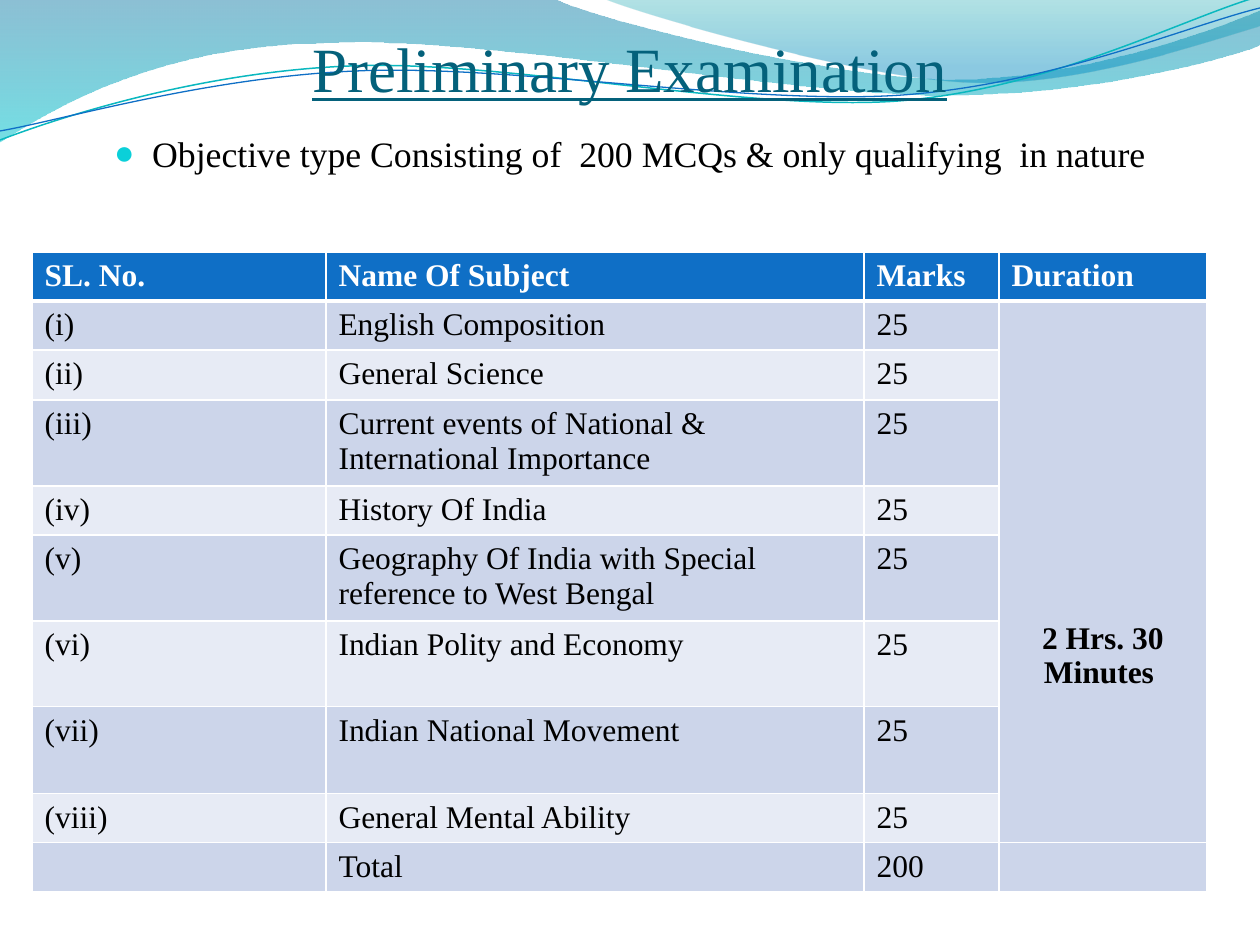
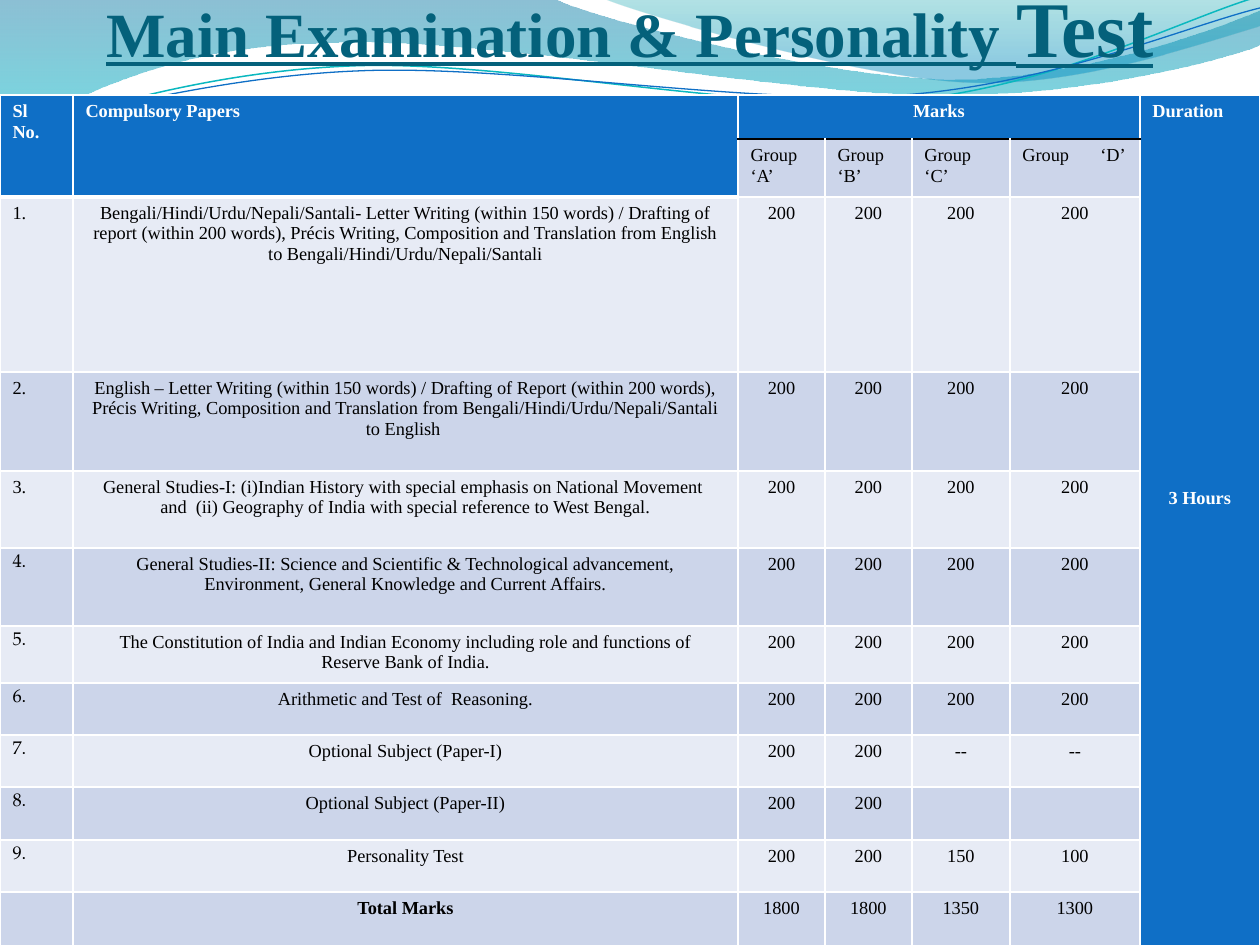
"""Builds two slides on the examination scheme: preliminary, and main with personality test."""
import itertools

import lxml.etree
import pptx
import pptx.dml.color
import pptx.enum.text
import pptx.oxml.ns
import pptx.util

RGB = pptx.dml.color.RGBColor
ALIGN = pptx.enum.text.PP_ALIGN
ANCHOR = pptx.enum.text.MSO_ANCHOR
qn = pptx.oxml.ns.qn

WHITE = RGB(0xFF, 0xFF, 0xFF)
BLACK = RGB(0, 0, 0)
TITLE_TEAL = RGB(0x04, 0x61, 0x7B)
HEADER_BLUE = RGB(0x0F, 0x6F, 0xC6)
BULLET_CYAN = RGB(0x0B, 0xD0, 0xD9)
STRAND_TEAL = RGB(0x0A, 0xB8, 0xBF)
BAND_DARK = RGB(0xCC, 0xD5, 0xEA)
BAND_LIGHT = RGB(0xE7, 0xEB, 0xF5)

SERIF = "Times New Roman"
NUMERAL = "TeX Gyre Pagella"
EMU_PER_PX = 914400 / 126

WAVE = [(0, 0), [(554, -1)], [(600, 21), (837, 79), (955, 79)],
        [(1075, 79), (1207, 33), (1260, 11)], [(1261, 45)],
        [(1239, 55), (1096, 96), (940, 95)], [(784, 95), (481, 35), (324, 43)],
        [(163, 45), (58, 105), (-1, 142)]]
WAVE_STOPS = [(0, RGB(0x00, 0x74, 0xA1), 45), (1, RGB(0x00, 0xC6, 0xCF), 55)]
CREST = [(604, -1), [(641, 15), (859, 78), (969, 82)],
         [(1079, 87), (1211, 40), (1260, 26)], [(1260, 0)]]
CREST_STOPS = [(0, RGB(0x00, 0xA1, 0xA9), 30), (0.8, RGB(0x00, 0x8B, 0xBF), 45)]
TEAL_STRAND = [(0, 140), [(60, 117), (199, 72), (349, 66)],
               [(498, 59), (747, 112), (898, 101)], [(1050, 89), (1182, 19), (1257, -3)]]
BLUE_STRAND = [(0, 131), [(59, 121), (207, 77), (357, 71)],
               [(508, 64), (752, 106), (903, 95)], [(1053, 84), (1187, 26), (1260, 8)]]

SUBJECTS = [
    ["SL. No.", "Name Of Subject", "Marks", "Duration"],
    ["(i)", "English Composition", "25", "2 Hrs. 30 Minutes "],
    ["(ii)", "General Science", "25", ""],
    ["(iii)", "Current events of National & International Importance", "25", ""],
    ["(iv)", "History Of India", "25", ""],
    ["(v)", "Geography Of India with Special reference to West Bengal", "25", ""],
    ["(vi)", "Indian Polity and Economy", "25", ""],
    ["(vii)", "Indian National Movement", "25", ""],
    ["(viii)", "General Mental Ability", "25", ""],
    ["", "Total", "200", ""],
]

ALL_GROUPS = ["200"] * 4
PAPERS = [
    ("Bengali/Hindi/Urdu/Nepali/Santali- Letter Writing (within 150 words) / Drafting of "
     "report (within 200 words), Précis Writing, Composition and Translation from English "
     "to Bengali/Hindi/Urdu/Nepali/Santali", ALL_GROUPS),
    ("English – Letter Writing (within 150 words) / Drafting of Report (within 200 words), "
     "Précis Writing, Composition and Translation from "
     "Bengali/Hindi/Urdu/Nepali/Santali to English ", ALL_GROUPS),
    ("General Studies-I: (i)Indian History with special emphasis on National Movement \n"
     "and  (ii) Geography of India with special reference to West Bengal.", ALL_GROUPS),
    ("General Studies-II: Science and Scientific & Technological advancement, "
     "Environment, General Knowledge and Current Affairs.", ALL_GROUPS),
    ("The Constitution of India and Indian Economy including role and functions of "
     "Reserve Bank of India.", ALL_GROUPS),
    ("Arithmetic and Test of  Reasoning.", ALL_GROUPS),
    ("Optional Subject (Paper-I)", ["200", "200", "--", "--"]),
    ("Optional Subject (Paper-II)", ["200", "200", "", ""]),
    ("Personality Test", ["200", "200", "150", "100"]),
]


def px(length):
    return pptx.util.Emu(round(length * EMU_PER_PX))


class Deck:
    """Holds the style and the current slide, and draws each kind of element on it."""

    def __init__(self):
        self.show = pptx.Presentation()
        self.show.slide_width, self.show.slide_height = px(1260), px(945)

    def new_slide(self):
        self.slide = self.show.slides.add_slide(self.show.slide_layouts[6])
        self.band(WAVE, WAVE_STOPS)
        self.band(CREST, CREST_STOPS)
        self.strand(TEAL_STRAND, STRAND_TEAL, 0.85)
        self.strand(BLUE_STRAND, HEADER_BLUE, 0.75)

    def freeform(self, outline, close):
        start, *segments = outline
        builder = self.slide.shapes.build_freeform(px(start[0]), px(start[1]), scale=1.0)
        builder.add_line_segments([(px(x), px(y)) for *_, (x, y) in segments], close=close)
        shape = builder.convert_to_shape()
        shape.shadow.inherit = False
        for edge, segment in zip(list(shape._element.iter(qn("a:lnTo"))), segments):
            if len(segment) == 3:
                curve = lxml.etree.Element(qn("a:cubicBezTo"))
                for x, y in segment:
                    lxml.etree.SubElement(curve, qn("a:pt"), x=str(px(x) - shape.left),
                                          y=str(px(y) - shape.top))
                edge.getparent().replace(edge, curve)
        return shape

    def band(self, outline, stops):
        shape = self.freeform(outline, True)
        shape.line.fill.background()
        shape.fill.gradient()
        shape.fill.gradient_angle = 270
        for stop, (position, color, _) in zip(shape.fill.gradient_stops, stops):
            stop.position = position
            stop.color.rgb = color
        tints = shape._element.spPr.find(qn("a:gradFill")).iter(qn("a:srgbClr"))
        for tint, (_, _, opacity) in zip(tints, stops):
            lxml.etree.SubElement(tint, qn("a:alpha")).set("val", str(opacity * 1000))

    def strand(self, outline, color, width):
        shape = self.freeform(outline, False)
        shape.fill.background()
        shape.line.color.rgb = color
        shape.line.width = pptx.util.Pt(width)

    def font(self, paragraph, size, color, bold=False, face=SERIF):
        font = paragraph.font
        font.name, font.size, font.bold = face, pptx.util.Pt(size), bold
        font.color.rgb = color

    def text_frame(self, left, top, width, height):
        frame = self.slide.shapes.add_textbox(px(left), px(top), px(width), px(height)).text_frame
        frame.word_wrap = True
        frame.auto_size = pptx.enum.text.MSO_AUTO_SIZE.NONE
        frame.paragraphs[0].alignment = ALIGN.CENTER
        return frame

    def title(self, words, bottom, bold=False, large_ending=""):
        frame = self.text_frame(63, 0, 1134, bottom)
        frame.vertical_anchor = ANCHOR.BOTTOM
        frame.margin_left = frame.margin_right = frame.margin_bottom = 0
        heading = frame.paragraphs[0]
        self.font(heading, 36, TITLE_TEAL, bold)
        heading.font.underline = True
        heading.add_run().text = words
        if large_ending:
            ending = heading.add_run()
            ending.text = large_ending
            ending.font.size = pptx.util.Pt(45)

    def bullet(self, words, left, top, width, height):
        point = self.text_frame(left, top, width, height).paragraphs[0]
        point.text = words
        point.space_before = pptx.util.Pt(3)
        properties = point._p.get_or_add_pPr()
        properties.set("marL", str(px(38)))
        properties.set("indent", str(px(-38)))
        color = lxml.etree.SubElement(properties, qn("a:buClr"))
        lxml.etree.SubElement(color, qn("a:srgbClr")).set("val", str(BULLET_CYAN))
        lxml.etree.SubElement(properties, qn("a:buSzPct")).set("val", "95000")
        lxml.etree.SubElement(properties, qn("a:buFont")).set("typeface", SERIF)
        lxml.etree.SubElement(properties, qn("a:buChar")).set("char", "●")
        self.font(point, 20.4, BLACK)

    def borders(self, cell):
        properties = cell._tc.get_or_add_tcPr()
        for side in "LRTB":
            edge = lxml.etree.SubElement(properties, qn("a:ln" + side), w=str(pptx.util.Pt(1)))
            paint = lxml.etree.SubElement(edge, qn("a:solidFill"))
            lxml.etree.SubElement(paint, qn("a:srgbClr")).set("val", str(WHITE))

    def rule(self, grid, row, columns, color, width):
        for column in columns:
            for line, side in ((row, "B"), (row + 1, "T")):
                edge = grid.cell(line, column)._tc.tcPr.find(qn("a:ln" + side))
                edge.set("w", str(pptx.util.Pt(width)))
                next(edge.iter(qn("a:srgbClr"))).set("val", str(color))

    def table(self, left, top, widths, heights, rows, size, merges, centred, bold):
        grid = self.slide.shapes.add_table(
            len(rows), len(widths), px(left), px(top), px(sum(widths)), px(sum(heights))).table
        grid.first_row = grid.horz_banding = False
        for column, width in zip(grid.columns, widths):
            column.width = px(width)
        for row, height in zip(grid.rows, heights):
            row.height = px(height)
        header = set(itertools.product([0], range(len(widths))))
        for first_row, first_column, last_row, last_column in merges:
            grid.cell(first_row, first_column).merge(grid.cell(last_row, last_column))
            if first_row == 0:
                header.update(itertools.product(range(last_row + 1),
                                                range(first_column, last_column + 1)))
        for place in itertools.product(range(len(rows)), range(len(widths))):
            row, column = place
            cell = grid.cell(row, column)
            self.borders(cell)
            cell.fill.solid()
            cell.fill.fore_color.rgb = (HEADER_BLUE if place in header
                                        else BAND_DARK if row % 2 else BAND_LIGHT)
            cell.text_frame.text = rows[row][column]
            for paragraph in cell.text_frame.paragraphs:
                self.font(paragraph, size, WHITE if place in header else BLACK,
                          place in header or place in bold)
                if place in centred:
                    paragraph.alignment = ALIGN.CENTER
        return grid


def preliminary_examination(deck):
    deck.new_slide()
    deck.title("Preliminary Examination", 105)
    deck.bullet("Objective type Consisting of  200 MCQs & only qualifying  in nature",
                63, 126, 1134, 63)
    heights = [49, 49, 50, 86, 49, 86, 86, 87, 49, 49]
    duration = (1, 3)
    subjects = deck.table(32, 252, [294, 538, 135, 208], heights, SUBJECTS, 18,
                          [(1, 3, 8, 3)], {duration}, {duration})
    subjects.cell(*duration).margin_top = px(320)
    deck.rule(subjects, 0, range(4), WHITE, 3)


def main_examination(deck):
    deck.new_slide()
    deck.title("Main Examination & Personality ", 73, True, "Test")
    rows = [["Sl No.", "Compulsory Papers", "Marks", "", "", "", "Duration\n3 Hours"],
            ["", "", "Group ‘A’", "Group ‘B’", "Group ‘C’", "Group\t‘D’", ""]]
    rows += [[f"{number}.", paper, *marks, ""]
             for number, (paper, marks) in enumerate(PAPERS, 1)]
    rows.append(["", "Total Marks", "1800", "1800", "1350", "1300", ""])
    heights = [44, 58, 175, 99, 77, 78, 57, 52, 52, 53, 52, 53]
    centred = {(0, 2), *itertools.product(range(2, 12), range(1, 6))}
    papers = deck.table(0, 95, [73, 665, 87, 87, 98, 130, 120], heights, rows, 10.5,
                        [(0, 0, 1, 0), (0, 1, 1, 1), (0, 2, 0, 5), (0, 6, 11, 6)],
                        centred, {(11, 1)})
    deck.rule(papers, 1, range(2), WHITE, 3)
    deck.rule(papers, 0, range(2, 6), BLACK, 1)
    for row in range(5, 11):
        papers.cell(row, 0).text_frame.paragraphs[0].font.name = NUMERAL
    papers.cell(0, 0).margin_right = px(24)
    constitution = papers.cell(6, 1)
    constitution.margin_left = constitution.margin_right = px(18)
    hours = papers.cell(0, 6).text_frame.paragraphs[1]
    hours.alignment = ALIGN.CENTER
    hours.space_before = pptx.util.Pt(209.5)
    group_d = papers.cell(1, 5).text_frame.paragraphs[0]._p.get_or_add_pPr()
    tabs = lxml.etree.Element(qn("a:tabLst"))
    lxml.etree.SubElement(tabs, qn("a:tab"), pos=str(px(78)), algn="l")
    group_d.insert(0, tabs)


def main():
    deck = Deck()
    preliminary_examination(deck)
    main_examination(deck)
    deck.show.save("out.pptx")


if __name__ == "__main__":
    main()
